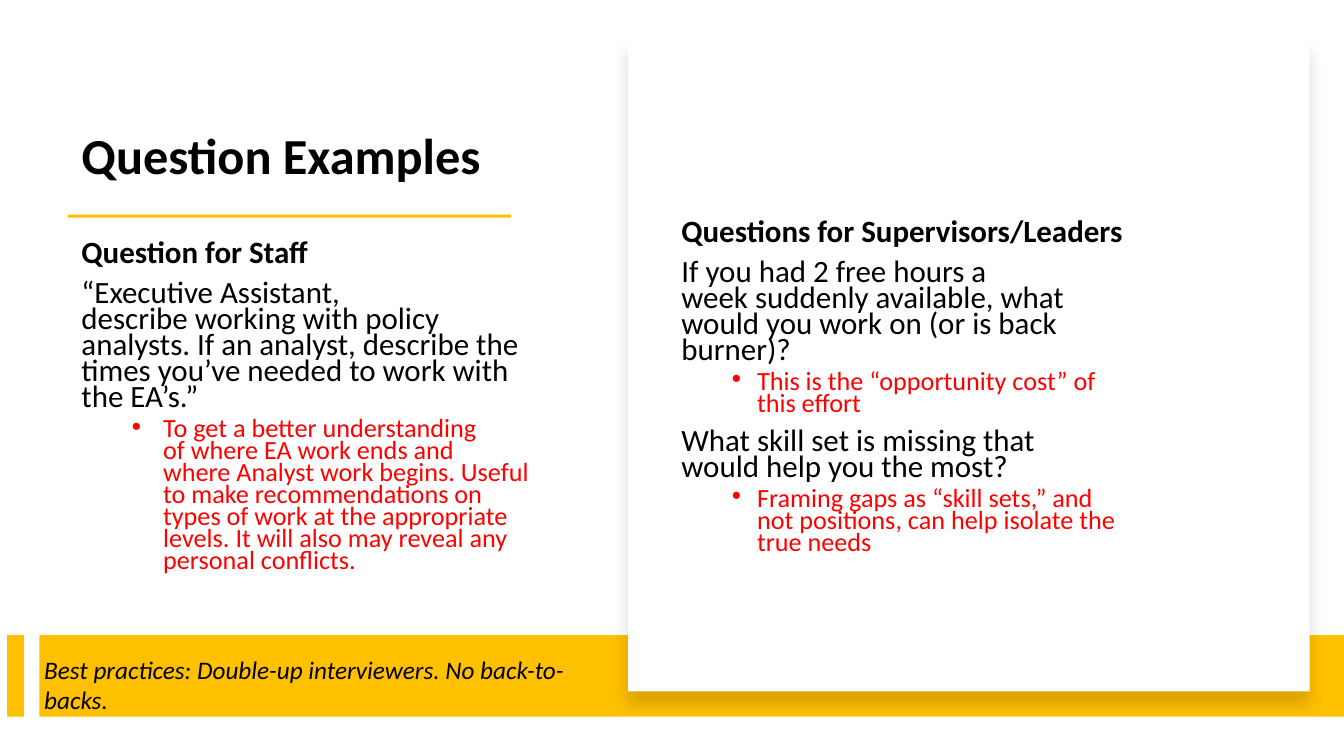
from lxml import etree
from pptx import Presentation
from pptx.dml.color import RGBColor
from pptx.enum.shapes import MSO_SHAPE
from pptx.enum.text import MSO_ANCHOR, PP_ALIGN
from pptx.oxml.ns import qn
from pptx.util import Pt

PX = 9144  # 100 px to the inch
RECTANGLE = MSO_SHAPE.RECTANGLE
TOP, BOTTOM = MSO_ANCHOR.TOP, MSO_ANCHOR.BOTTOM
LEFT = PP_ALIGN.LEFT

FONT = "Calibri"
BLACK, WHITE, RED, GOLD = "000000", "FFFFFF", "FF0000", "FFC000"
HARD_SPACE = chr(160)  # typed as ~ in the questions, keeps two words on one line

STAFF_QUESTIONS = [
    ("heading", "Question for Staff"),
    ("question", "“Executive Assistant, describe~working with policy analysts.~If an~analyst, "
                 "describe the times~you’ve~needed to work with the EA’s.”"),
    ("reason", "To get a better understanding of~where EA work ends and where~Analyst work begins. "
               "Useful to make~recommendations on types of work~at the appropriate levels.~"
               "It will~also~may reveal any personal conflicts."),
]
LEADER_QUESTIONS = [
    ("heading", "Questions for Supervisors/Leaders"),
    ("question", "If you had 2 free hours a week~suddenly available, what would~you work on "
                 "(or is back burner)?"),
    ("reason", "This is the “opportunity cost” of this~effort"),
    ("question", "What skill set is missing that would~help you the most?"),
    ("reason", "Framing gaps as “skill sets,” and not~positions, can help~isolate the true~needs"),
]


def px(length):
    return length * PX


def color(value):
    return RGBColor.from_string(value)


def add_block(slide, left, top, width, height, fill):
    block = slide.shapes.add_shape(RECTANGLE, px(left), px(top), px(width), px(height))
    block.shadow.inherit = False
    block.fill.solid()
    block.fill.fore_color.rgb = color(fill)
    block.line.fill.background()
    return block


def add_text_frame(slide, left, top, width, height, anchor=TOP):
    box = slide.shapes.add_textbox(px(left), px(top), px(width), px(height))
    frame = box.text_frame
    frame.word_wrap = True
    frame.vertical_anchor = anchor
    return frame


def style(paragraph, text, size, fill=BLACK, bold=False, italic=False):
    paragraph.text = text.replace("~", HARD_SPACE)
    paragraph.alignment = LEFT
    font = paragraph.font
    font.name, font.size, font.bold, font.italic = FONT, Pt(size), bold, italic
    font.color.rgb = color(fill)


def add_bullet(paragraph, indent, hanging):
    properties = paragraph._p.get_or_add_pPr()
    properties.set("marL", str(px(indent)))
    properties.set("indent", str(-px(hanging)))
    etree.SubElement(properties, qn("a:buFont"), typeface="Arial")
    etree.SubElement(properties, qn("a:buChar"), char="•")


def add_shadow(shape):
    effects = shape._element.spPr.find(qn("a:effectLst"))
    shadow = etree.SubElement(effects, qn("a:outerShdw"), blurRad=str(Pt(11)), dist=str(Pt(10)),
                              dir="5400000", algn="t", rotWithShape="0")
    shade = etree.SubElement(shadow, qn("a:srgbClr"), val=BLACK)
    etree.SubElement(shade, qn("a:alpha"), val="15000")


def add_questions(frame, entries, indent, hanging):
    for index, (kind, text) in enumerate(entries):
        paragraph = frame.paragraphs[0] if index == 0 else frame.add_paragraph()
        paragraph.line_spacing = 0.7
        if kind == "reason":
            style(paragraph, text, 18.7, RED)
            paragraph.space_before = Pt(5)
            add_bullet(paragraph, indent, hanging)
        else:
            style(paragraph, text, 22.1, bold=kind == "heading")
            paragraph.space_before = Pt(10)


def add_staff_column(slide, left, top, width):
    # Title above its gold rule
    title = add_text_frame(slide, left, top, width, 131, BOTTOM).paragraphs[0]
    style(title, "Question Examples", 36, bold=True)
    title.line_spacing = 0.9
    add_block(slide, left - 4, top + 155, 440, 3, GOLD)
    # Questions for staff
    frame = add_text_frame(slide, left, top + 164, width, 384)
    frame.margin_top = px(19)
    add_questions(frame, STAFF_QUESTIONS, 81, 31)


def add_gold_band(slide, top, height, slide_width):
    add_block(slide, 7, top, 17, height, GOLD)
    add_block(slide, 39, top, slide_width - 39, height, GOLD)


def add_leader_card(slide, left, top, width, height):
    card = add_block(slide, left, top, width, height, WHITE)
    add_shadow(card)
    frame = add_text_frame(slide, left + 43, top + 176, 468, 374)
    add_questions(frame, LEADER_QUESTIONS, 75, 25)


def add_best_practices(slide, left, top, width, height):
    note = add_text_frame(slide, left, top, width, height).paragraphs[0]
    style(note, "Best practices: Double-up interviewers. No back-to-backs.", 18, italic=True)


def main():
    presentation = Presentation()
    presentation.slide_width, presentation.slide_height = px(1333), px(750)
    slide = presentation.slides.add_slide(presentation.slide_layouts[6])
    add_staff_column(slide, 71, 58, 468)
    add_gold_band(slide, 630, 81, 1333)
    add_leader_card(slide, 623, 39, 676, 647)
    add_best_practices(slide, 34, 644, 567, 71)
    presentation.save("out.pptx")


if __name__ == "__main__":
    main()
